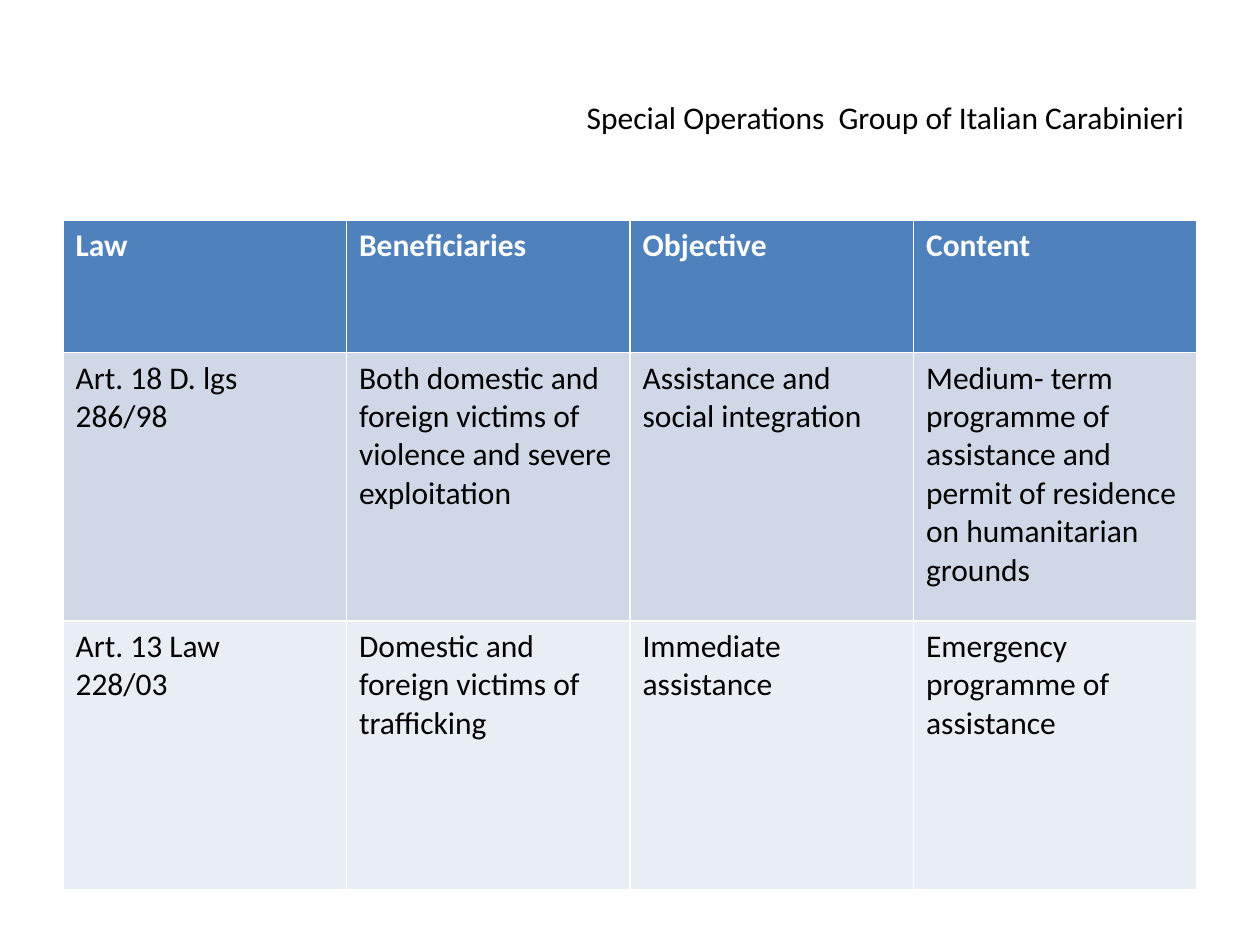
"""Build a slide comparing two Italian laws on help for victims."""
from dataclasses import dataclass

from pptx import Presentation
from pptx.dml.color import RGBColor
from pptx.enum.text import MSO_ANCHOR, PP_ALIGN
from pptx.util import Pt


@dataclass(frozen=True)
class Theme:
    font: str = "Calibri"
    size: int = 18
    ink: str = "000000"
    paper: str = "FFFFFF"
    head: str = "4F81BD"
    bands: tuple = ("D0D8E8", "E9EDF4")


THEME = Theme()
LEFT, WIDTH = 36, 648
TITLE = "Special Operations  Group of Italian Carabinieri"
HEADS = ["Law", "Beneficiaries", "Objective", "Content"]
LAWS = [
    [
        "Art. 18 D. lgs\n286/98",
        "Both domestic and foreign victims of violence and severe exploitation",
        "Assistance and social integration",
        "Medium- term programme of assistance and permit of residence "
        "on humanitarian grounds",
    ],
    [
        "Art. 13 Law \v228/03",
        "Domestic and foreign victims of trafficking",
        "Immediate assistance",
        "Emergency programme of assistance",
    ],
]


def write(frame, text, color, bold=False, align=PP_ALIGN.LEFT):
    frame.text = text
    for para in frame.paragraphs:
        para.alignment = align
        for run in para.runs:
            font = run.font
            font.name, font.size, font.bold = THEME.font, Pt(THEME.size), bold
            font.color.rgb = RGBColor.from_string(color)


def add_title(slide):
    box = slide.shapes.add_textbox(Pt(LEFT), Pt(21.6), Pt(WIDTH), Pt(90))
    frame = box.text_frame
    frame.word_wrap = True
    frame.vertical_anchor = MSO_ANCHOR.MIDDLE
    write(frame, TITLE, THEME.ink, align=PP_ALIGN.RIGHT)


def fill_row(row, texts, fill, color, bold=False):
    for cell, text in zip(row.cells, texts):
        cell.fill.solid()
        cell.fill.fore_color.rgb = RGBColor.from_string(fill)
        write(cell.text_frame, text, color, bold)


def add_laws(slide):
    tall = [75.6] + [153.36] * len(LAWS)
    table = slide.shapes.add_table(
        len(tall), len(HEADS), Pt(LEFT), Pt(126), Pt(WIDTH), Pt(sum(tall))
    ).table
    for row, height in zip(table.rows, tall):
        row.height = Pt(height)
    fill_row(table.rows[0], HEADS, THEME.head, THEME.paper, bold=True)
    for i, (law, band) in enumerate(zip(LAWS, THEME.bands), 1):
        fill_row(table.rows[i], law, band, THEME.ink)


def main():
    deck = Presentation()
    deck.slide_width, deck.slide_height = Pt(720), Pt(540)
    slide = deck.slides.add_slide(deck.slide_layouts[6])
    add_title(slide)
    add_laws(slide)
    deck.save("out.pptx")


if __name__ == "__main__":
    main()
